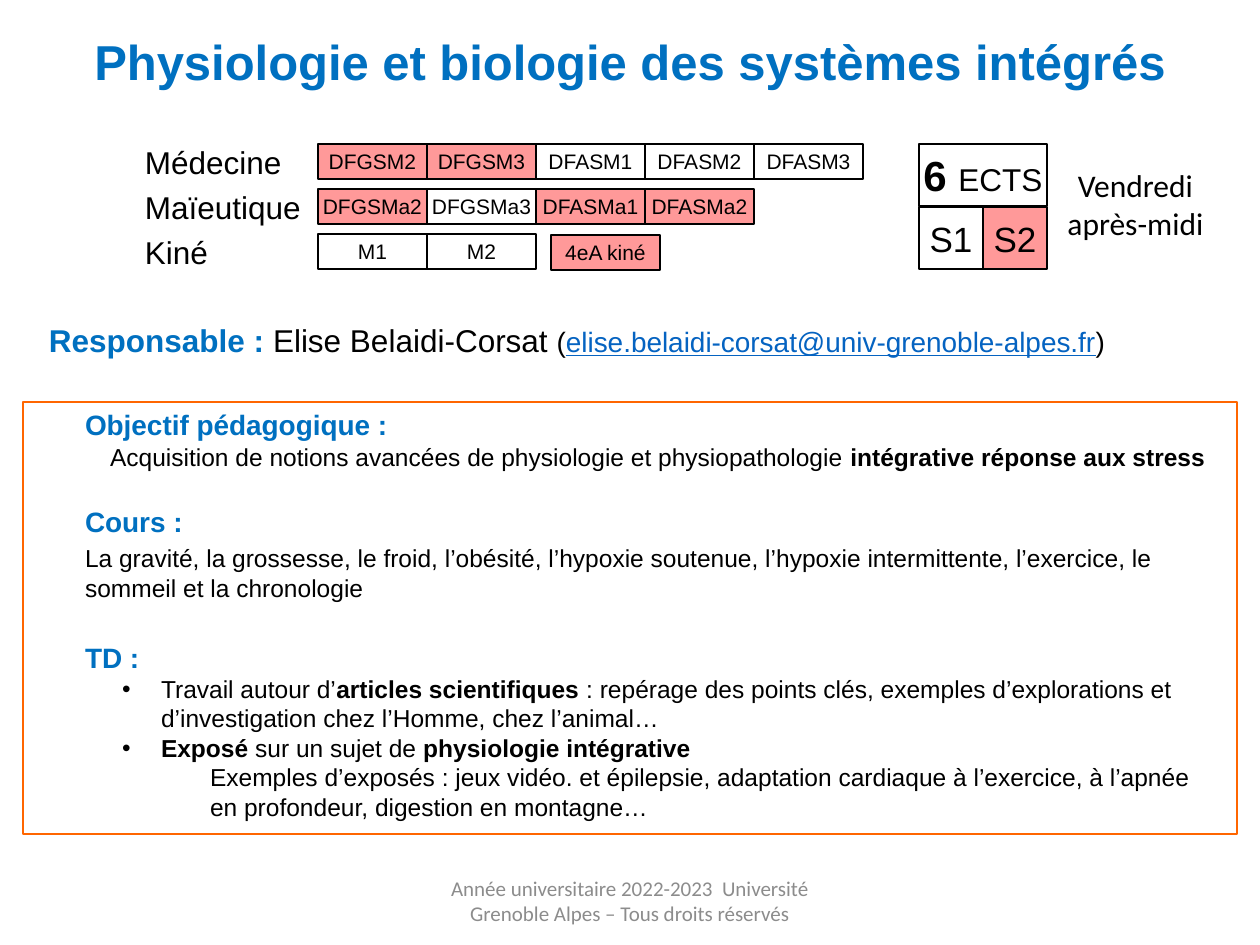
from lxml import etree
from pptx import Presentation
from pptx.dml.color import RGBColor
from pptx.enum.shapes import MSO_SHAPE
from pptx.enum.text import MSO_ANCHOR, PP_ALIGN
from pptx.oxml.ns import qn
from pptx.util import Emu, Pt

RECTANGLE = MSO_SHAPE.RECTANGLE
MIDDLE, TOP = MSO_ANCHOR.MIDDLE, MSO_ANCHOR.TOP
LEFT, CENTER = PP_ALIGN.LEFT, PP_ALIGN.CENTER
EMU_PER_PX = 914400 / 126
COLORS = {"blue": "0070C0", "black": "000000", "white": "FFFFFF", "pink": "FF9999",
          "orange": "FF6600", "gray": "8C8C8C", "link": "0563C1"}


def add_box(left, top, width, height, fill=None, line=None, line_width=1,
            anchor=MIDDLE, inset=(0, 0), wrap=True):
    """Add a rectangle, or a text box when it has no line; lengths in px."""
    place = [Emu(round(length * EMU_PER_PX)) for length in (left, top, width, height)]
    if line:
        shape = slide.shapes.add_shape(RECTANGLE, *place)
        shape.shadow.inherit = False
        shape.line.color.rgb = RGBColor.from_string(COLORS[line])
        shape.line.width = Pt(line_width)
        if fill:
            shape.fill.solid()
            shape.fill.fore_color.rgb = RGBColor.from_string(COLORS[fill])
        else:
            shape.fill.background()
    else:
        shape = slide.shapes.add_textbox(*place)
    frame = shape.text_frame
    frame.word_wrap = wrap
    frame.vertical_anchor = anchor
    frame.margin_left = frame.margin_right = Emu(round(inset[0] * EMU_PER_PX))
    frame.margin_top = frame.margin_bottom = Emu(round(inset[1] * EMU_PER_PX))
    return frame


def write(paragraph, runs, align=LEFT, font="Arial"):
    """Fill a paragraph with runs given as (text, size, color, bold)."""
    paragraph.alignment = align
    for text, size, color, bold in runs:
        run = paragraph.add_run()
        run.text = text
        run.font.name = font
        run.font.size = Pt(size)
        run.font.bold = bold
        run.font.underline = color == "link"
        run.font.color.rgb = RGBColor.from_string(COLORS[color])


presentation = Presentation()
presentation.slide_width = Emu(round(1260 * EMU_PER_PX))
presentation.slide_height = Emu(round(945 * EMU_PER_PX))
slide = presentation.slides.add_slide(presentation.slide_layouts[6])

# Title
title = add_box(0, 25, 1260, 72, anchor=TOP, inset=(13, 6))
write(title.paragraphs[0],
      [("Physiologie et biologie des systèmes intégrés", 28, "blue", True)], CENTER)

# Years of study open to each programme
CELL_WIDTH, CELL_HEIGHT, ROW_STEP = 109, 35, 45
programmes = [
    ("Médecine", [("DFGSM2", "pink"), ("DFGSM3", "pink"), ("DFASM1", "white"),
                  ("DFASM2", "white"), ("DFASM3", "white")]),
    ("Maïeutique", [("DFGSMa2", "pink"), ("DFGSMa3", "white"), ("DFASMa1", "pink"),
                    ("DFASMa2", "pink")]),
    ("Kiné", [("M1", "white"), ("M2", "white")]),
]
cells = []
for row, (programme, years) in enumerate(programmes):
    top = 144 + row * ROW_STEP
    label = add_box(145, top, 160, CELL_HEIGHT, wrap=False)
    write(label.paragraphs[0], [(programme, 18, "black", False)])
    for column, (year, fill) in enumerate(years):
        cells.append((318 + column * CELL_WIDTH, top, year, fill))
cells.append((551, 235, "4eA kiné", "pink"))
for left, top, year, fill in cells:
    cell = add_box(left, top, CELL_WIDTH, CELL_HEIGHT, fill, "black", wrap=False)
    write(cell.paragraphs[0], [(year, 12, "black", False)], CENTER)

# Credits, semesters and time slot
credits = add_box(919, 144, 128, 62, line="black", wrap=False)
write(credits.paragraphs[0],
      [("6 ", 24, "black", True), ("ECTS", 18, "black", False)], CENTER)
for column, (semester, fill) in enumerate([("S1", "white"), ("S2", "pink")]):
    cell = add_box(919 + column * 64, 207, 64, 62, fill, "black", wrap=False)
    write(cell.paragraphs[0], [(semester, 20, "black", False)], CENTER)
slot = add_box(1053, 160, 165, 89, anchor=TOP, inset=(13, 6))
write(slot.paragraphs[0], [("Vendredi après-midi", 18, "black", False)], CENTER, "Calibri")

# Contact
contact = add_box(49, 321, 1186, 38, anchor=TOP)
write(contact.paragraphs[0], [
    ("Responsable : ", 18, "blue", True),
    ("Elise Belaidi-Corsat ", 18, "black", False),
    ("(", 16, "black", False),
    ("elise.belaidi-corsat@univ-grenoble-alpes.fr", 16, "link", False),
    (")", 16, "black", False),
])

# Course description: left margin px, first line indent px, space before pt, runs
description = [
    (49, 0, 0, [("Objectif pédagogique :", 16, "blue", True)]),
    (74, 0, 0, [("Acquisition de notions avancées de physiologie et physiopathologie ",
                 14, "black", False),
                ("intégrative réponse aux stress", 14, "black", True)]),
    (49, 0, 19, [("Cours :", 16, "blue", True)]),
    (49, 0, 3, [("La gravité, la grossesse, le froid, l’obésité, l’hypoxie soutenue, "
                 "l’hypoxie intermittente, l’exercice, le sommeil et la chronologie",
                 14, "black", False)]),
    (49, 0, 22, [("TD :", 16, "blue", True)]),
    (125, -39, 0, [("Travail autour d’", 14, "black", False),
                   ("articles scientifiques ", 14, "black", True),
                   (": repérage des points clés, exemples d’explorations et "
                    "d’investigation chez l’Homme, chez l’animal…", 14, "black", False)]),
    (125, -39, 0, [("Exposé", 14, "black", True),
                   (" sur un sujet de ", 14, "black", False),
                   ("physiologie intégrative", 14, "black", True)]),
    (174, 0, 0, [("Exemples d’exposés : jeux vidéo. et épilepsie, adaptation cardiaque à "
                  "l’exercice, à l’apnée en profondeur, digestion en montagne…",
                  14, "black", False)]),
]
frame = add_box(23, 402, 1214, 432, line="orange", line_width=1.5, anchor=TOP, inset=(13, 6))
for index, (margin, indent, space, runs) in enumerate(description):
    paragraph = frame.add_paragraph() if index else frame.paragraphs[0]
    write(paragraph, runs)
    paragraph.space_before = Pt(space)
    properties = paragraph._p.get_or_add_pPr()
    properties.set("marL", str(round(margin * EMU_PER_PX)))
    properties.set("indent", str(round(indent * EMU_PER_PX)))
    if indent:
        etree.SubElement(properties, qn("a:buFont")).set("typeface", "Arial")
        etree.SubElement(properties, qn("a:buChar")).set("char", "•")

# Footer
footer = add_box(417, 876, 426, 50, inset=(13, 6))
write(footer.paragraphs[0],
      [("Année universitaire 2022-2023  Université Grenoble Alpes – Tous droits réservés",
        12, "gray", False)], CENTER, "Calibri")

presentation.save("out.pptx")
